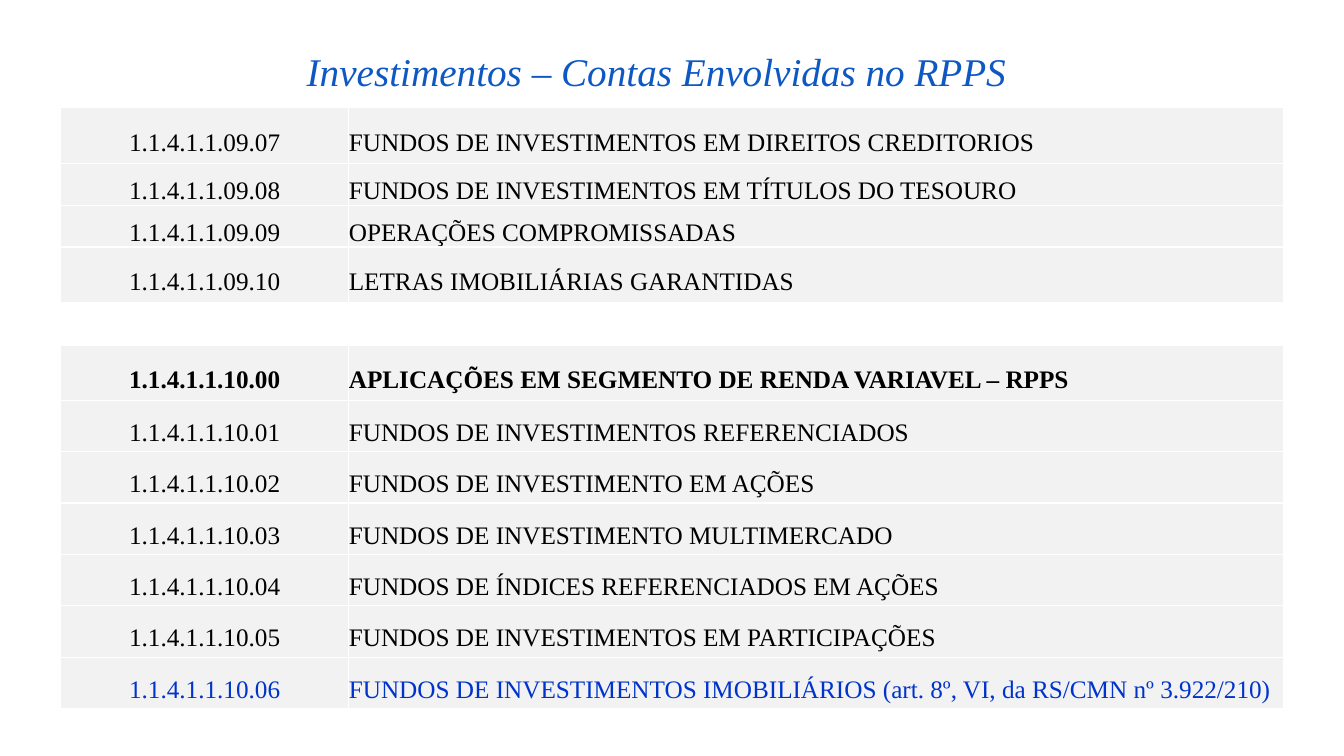
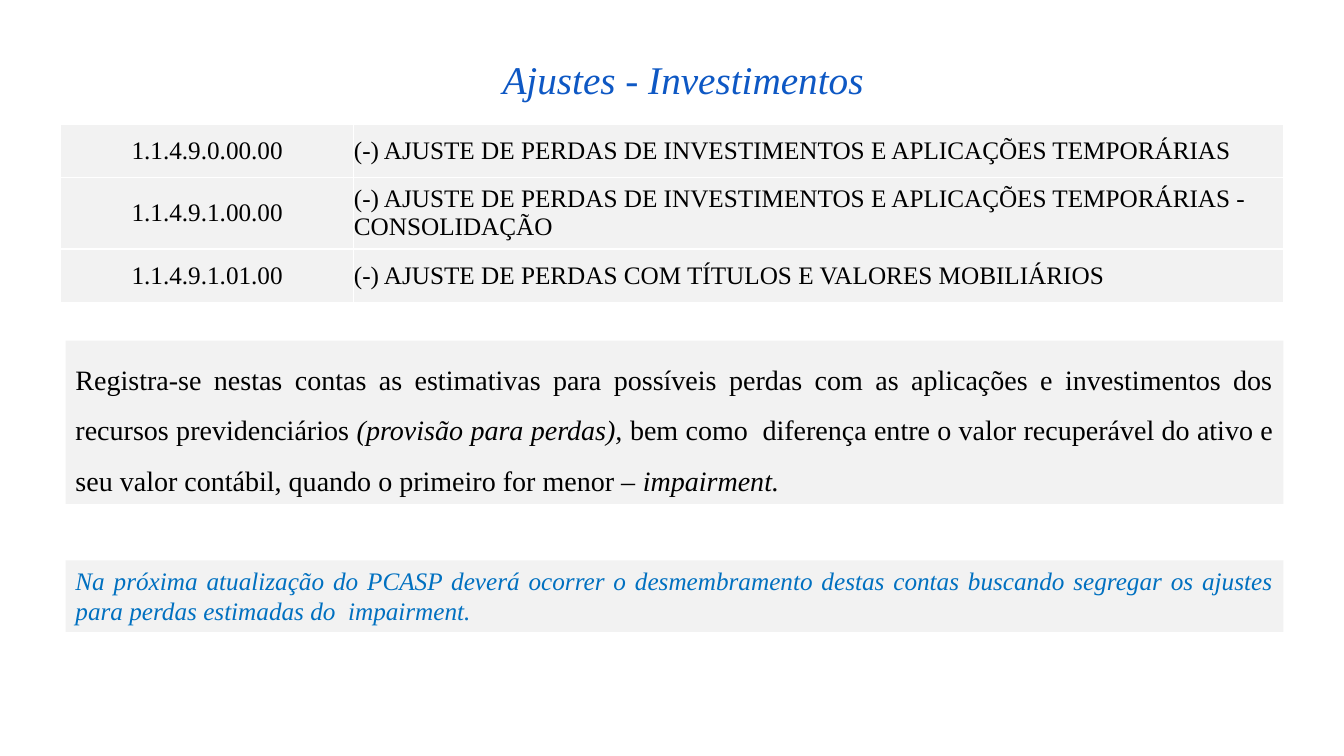
from dataclasses import dataclass

from lxml import etree
from pptx import Presentation
from pptx import util as u
from pptx.dml.color import RGBColor
from pptx.enum import shapes, text
from pptx.oxml import ns


@dataclass(frozen=True)
class Theme:
    font: str = "Times New Roman"
    title: str = "0E58C4"
    ink: str = "000000"
    accent: str = "0033CC"
    note: str = "0070C0"
    panel: str = "F2F2F2"
    border: str = "FFFFFF"
    title_size: int = 28
    body_size: int = 20
    small_size: int = 18
    border_width: int = 1


T = Theme()
ALIGN = text.PP_ALIGN
LEFT, WIDTH = 0.6, 12.13

FUNDS = [
    ("1.1.4.1.1.09.07", "FUNDOS DE INVESTIMENTOS EM DIREITOS CREDITORIOS"),
    ("1.1.4.1.1.09.08", "FUNDOS DE INVESTIMENTOS EM TÍTULOS DO TESOURO"),
    ("1.1.4.1.1.09.09", "OPERAÇÕES COMPROMISSADAS"),
    ("1.1.4.1.1.09.10", "LETRAS IMOBILIÁRIAS GARANTIDAS"),
]
VARIABLE_INCOME = [
    ("1.1.4.1.1.10.00", "APLICAÇÕES EM SEGMENTO DE RENDA VARIAVEL – RPPS"),
    ("1.1.4.1.1.10.01", "FUNDOS DE INVESTIMENTOS REFERENCIADOS"),
    ("1.1.4.1.1.10.02", "FUNDOS DE INVESTIMENTO EM AÇÕES"),
    ("1.1.4.1.1.10.03", "FUNDOS DE INVESTIMENTO MULTIMERCADO"),
    ("1.1.4.1.1.10.04", "FUNDOS DE ÍNDICES REFERENCIADOS EM AÇÕES"),
    ("1.1.4.1.1.10.05", "FUNDOS DE INVESTIMENTOS EM PARTICIPAÇÕES"),
    ("1.1.4.1.1.10.06",
     "FUNDOS DE INVESTIMENTOS IMOBILIÁRIOS (art. 8º, VI, da RS/CMN nº 3.922/210)"),
]
ADJUSTMENTS = [
    ("1.1.4.9.0.00.00",
     "(-) AJUSTE DE PERDAS DE INVESTIMENTOS E APLICAÇÕES TEMPORÁRIAS"),
    ("1.1.4.9.1.00.00",
     "(-) AJUSTE DE PERDAS DE INVESTIMENTOS E APLICAÇÕES TEMPORÁRIAS - CONSOLIDAÇÃO"),
    ("1.1.4.9.1.01.00", "(-) AJUSTE DE PERDAS COM TÍTULOS E VALORES MOBILIÁRIOS"),
]
EXPLANATION = [
    ("Registra-se nestas contas as estimativas para possíveis perdas com as "
     "aplicações e investimentos dos recursos previdenciários ", False),
    ("(provisão para perdas), ", True),
    ("bem como  diferença entre o valor recuperável do ativo e seu valor "
     "contábil, quando o primeiro for menor – ", False),
    ("impairment.", True),
]
NOTE = [
    ("Na próxima atualização do PCASP deverá ocorrer o desmembramento destas "
     "contas buscando segregar os ajustes para perdas estimadas do  impairment.", True),
]


def inches(box):
    return [u.Inches(v) for v in box]


def paint(target, color):
    target.fill.solid()
    target.fill.fore_color.rgb = RGBColor.from_string(color)


def write(tf, runs, size=T.small_size, color=T.ink, bold=False,
          align=ALIGN.LEFT, spacing=None):
    tf.word_wrap = True
    p = tf.paragraphs[0]
    p.alignment = align
    if spacing:
        p.line_spacing = spacing
    for words, italic in runs:
        r = p.add_run()
        r.text = words
        r.font.name = T.font
        r.font.size = u.Pt(size)
        r.font.bold = bold
        r.font.italic = italic
        r.font.color.rgb = RGBColor.from_string(color)


def add_borders(cell):
    tc_pr = cell._tc.get_or_add_tcPr()
    for i, side in enumerate(("a:lnL", "a:lnR", "a:lnT", "a:lnB")):
        ln = etree.Element(ns.qn(side), w=str(u.Pt(T.border_width)))
        fill = etree.SubElement(ln, ns.qn("a:solidFill"))
        etree.SubElement(fill, ns.qn("a:srgbClr"), val=T.border)
        tc_pr.insert(i, ln)


def add_title(s, box, words):
    sp = s.shapes.add_textbox(*inches(box))
    write(sp.text_frame, [(words, True)], size=T.title_size,
          color=T.title, align=ALIGN.CENTER)


def add_accounts(s, top, rows, heights, code_width, spacing=None, styles=None):
    box = (LEFT, top, WIDTH, sum(heights))
    table = s.shapes.add_table(len(rows), 2, *inches(box)).table
    table.first_row = False
    table.horz_banding = False
    for col, width in zip(table.columns, (code_width, WIDTH - code_width)):
        col.width = u.Inches(width)
    for i, (row, height) in enumerate(zip(rows, heights)):
        table.rows[i].height = u.Inches(height)
        for j, align in enumerate((ALIGN.CENTER, ALIGN.LEFT)):
            cell = table.cell(i, j)
            cell.margin_left = cell.margin_right = 0
            cell.margin_top = cell.margin_bottom = 0
            cell.vertical_anchor = text.MSO_ANCHOR.MIDDLE
            paint(cell, T.panel)
            add_borders(cell)
            write(cell.text_frame, [(row[j], False)], align=align,
                  spacing=spacing, **(styles or {}).get(i, {}))


def add_panel(s, box, runs, **style):
    sp = s.shapes.add_shape(shapes.MSO_SHAPE.RECTANGLE, *inches(box))
    sp.shadow.inherit = False
    sp.line.fill.background()
    paint(sp, T.panel)
    sp.text_frame.vertical_anchor = text.MSO_ANCHOR.TOP
    write(sp.text_frame, runs, align=ALIGN.JUSTIFY, **style)


def build_accounts_slide(s):
    add_accounts(s, 1.07, FUNDS, [0.55, 0.41, 0.41, 0.55], 2.86, spacing=1.5)
    add_accounts(s, 3.43, VARIABLE_INCOME, [0.54] + [0.51] * 6, 2.86, spacing=1.5,
                 styles={0: {"bold": True}, 6: {"color": T.accent}})
    add_title(s, (0.78, 0.42, 11.46, 0.57), "Investimentos – Contas Envolvidas no RPPS")


def build_adjustments_slide(s):
    add_accounts(s, 1.23, ADJUSTMENTS, [0.53, 0.71, 0.53], 2.91)
    add_panel(s, (0.65, 3.38, 12.08, 1.62), EXPLANATION,
              size=T.body_size, spacing=1.5)
    add_panel(s, (0.65, 5.56, 12.08, 0.71), NOTE, color=T.note)
    add_title(s, (0.78, 0.5, 11.99, 0.57), "Ajustes - Investimentos")


def main():
    prs = Presentation()
    prs.slide_width, prs.slide_height = inches((13.33, 7.5))
    for build in (build_accounts_slide, build_adjustments_slide):
        build(prs.slides.add_slide(prs.slide_layouts[6]))
    prs.save("out.pptx")


if __name__ == "__main__":
    main()
